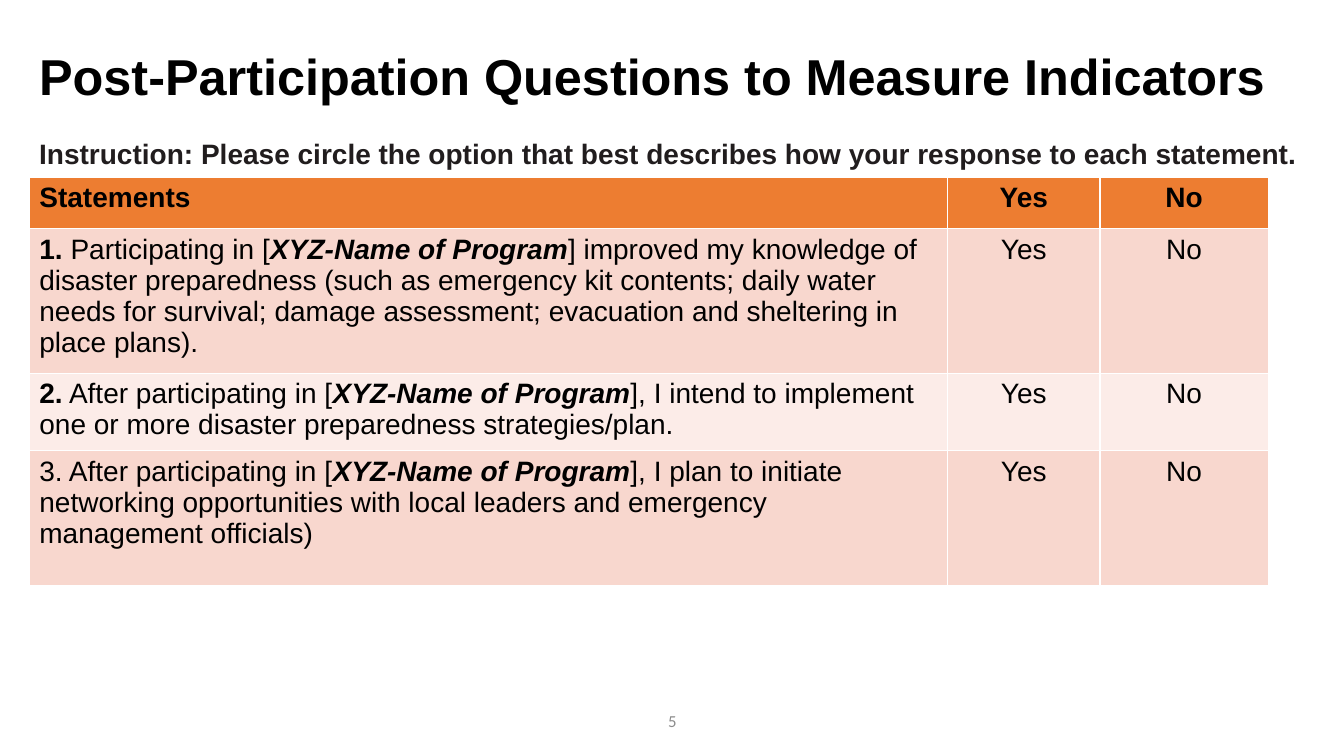
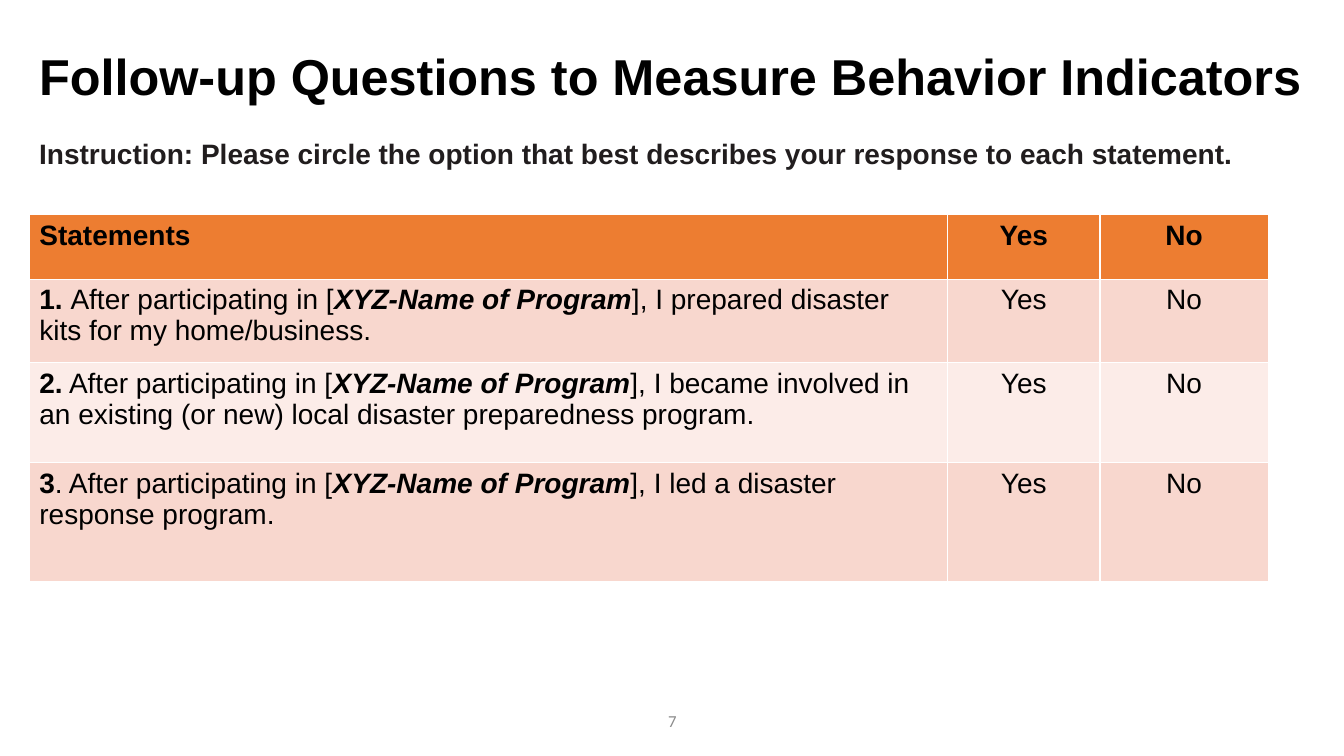
"""Build two survey slides that share a title style, a table style and a footer."""
from dataclasses import dataclass

from lxml import etree
from pptx import Presentation
from pptx.dml.color import RGBColor
from pptx.enum.text import MSO_ANCHOR, PP_ALIGN
from pptx.oxml.ns import qn
from pptx.util import Inches, Pt

BLACK, INK, GREY, WHITE = "000000", "211D1E", "8C8C8C", "FFFFFF"
HEADER_FILL = "ED7D31"
BAND_FILLS = ("F8D7CE", "FCECE8")
PROGRAM = "XYZ-Name of Program"
ANSWERS = ("Yes", "No")
LEFT, TEXT_WIDTH = 0.29, 12.8
COLUMN_WIDTHS = (9.11, 1.51, 1.67)


@dataclass(frozen=True)
class TextStyle:
    size: int
    color: str
    bold: bool = False
    font: str = "Arial"
    align: PP_ALIGN = PP_ALIGN.LEFT
    spacing: float = 1.0


TITLE = TextStyle(36, BLACK, bold=True, spacing=0.9)
INSTRUCTION = TextStyle(20, INK, bold=True, spacing=0.9)
FOOTER = TextStyle(12, GREY, font="Calibri", align=PP_ALIGN.CENTER)
HEADING = TextStyle(20, BLACK, bold=True)
HEADING_CENTERED = TextStyle(20, BLACK, bold=True, align=PP_ALIGN.CENTER)
STATEMENT = TextStyle(20, BLACK)
ANSWER = TextStyle(20, BLACK, align=PP_ALIGN.CENTER)


@dataclass(frozen=True)
class Statement:
    number: str
    opening: str
    ending: str
    height: float


@dataclass(frozen=True)
class Survey:
    title: str
    instruction: str
    number: int
    table_top: float
    header_height: float
    statements: tuple[Statement, ...]


SURVEYS = (
    Survey(
        "Post-Participation Questions to Measure Indicators",
        "Instruction: Please circle the option that best describes how your response to each statement.",
        5, 1.76, 0.51,
        (
            Statement("1. ", "Participating in [",
                      "] improved my knowledge of disaster preparedness (such as emergency kit contents; "
                      "daily water needs for survival; damage assessment; evacuation and sheltering in "
                      "place plans).", 1.33),
            Statement("2.", " After participating in [",
                      "], I intend to implement one or more disaster preparedness strategies/plan.", 0.72),
            Statement("", "3. After participating in [",
                      "], I plan to initiate networking opportunities with local leaders and emergency "
                      "management officials)", 1.34),
        ),
    ),
    Survey(
        "Follow-up Questions to Measure Behavior Indicators",
        "Instruction: Please circle the option that best describes your response to each statement.",
        7, 2.13, 0.64,
        (
            Statement("1. ", "After participating in [",
                      "], I prepared disaster kits for my home/business.", 0.83),
            Statement("2.", " After participating in [",
                      "], I became involved in an existing (or new) local disaster preparedness program.", 0.99),
            Statement("3", ". After participating in [",
                      "], I led a disaster response program.", 1.18),
        ),
    ),
)


def rgb(color: str) -> RGBColor:
    return RGBColor.from_string(color)


def style_paragraph(para, style: TextStyle) -> None:
    para.alignment = style.align
    para.line_spacing = style.spacing
    para.font.name = style.font
    para.font.size = Pt(style.size)
    para.font.bold = style.bold
    para.font.color.rgb = rgb(style.color)


def add_text(page, left: float, top: float, width: float, height: float,
             words: str, style: TextStyle, anchor=MSO_ANCHOR.MIDDLE) -> None:
    box = page.shapes.add_textbox(Inches(left), Inches(top), Inches(width), Inches(height))
    frame = box.text_frame
    frame.word_wrap = True
    frame.vertical_anchor = anchor
    para = frame.paragraphs[0]
    para.text = words
    style_paragraph(para, style)


def style_cell(cell, fill: str) -> None:
    properties = cell._tc.get_or_add_tcPr()
    for side in ("a:lnL", "a:lnR", "a:lnT", "a:lnB"):
        line = etree.SubElement(properties, qn(side), w=str(Pt(1)))
        solid = etree.SubElement(line, qn("a:solidFill"))
        etree.SubElement(solid, qn("a:srgbClr"), val=WHITE)
    cell.fill.solid()
    cell.fill.fore_color.rgb = rgb(fill)


def fill_cell(cell, words: str, style: TextStyle, fill: str) -> None:
    style_cell(cell, fill)
    para = cell.text_frame.paragraphs[0]
    para.text = words
    style_paragraph(para, style)


def fill_statement(cell, statement: Statement, fill: str) -> None:
    style_cell(cell, fill)
    para = cell.text_frame.paragraphs[0]
    style_paragraph(para, STATEMENT)
    parts = ((statement.number, True, False), (statement.opening, False, False),
             (PROGRAM, True, True), (statement.ending, False, False))
    for words, bold, italic in parts:
        if words:
            span = para.add_run()
            span.text = words
            span.font.bold = bold
            span.font.italic = italic


def add_survey_table(page, survey: Survey) -> None:
    heights = (survey.header_height, *(item.height for item in survey.statements))
    table = page.shapes.add_table(
        len(heights), len(COLUMN_WIDTHS), Inches(LEFT), Inches(survey.table_top),
        Inches(sum(COLUMN_WIDTHS)), Inches(sum(heights))).table
    for column, width in zip(table.columns, COLUMN_WIDTHS):
        column.width = Inches(width)
    for row, height in zip(table.rows, heights):
        row.height = Inches(height)

    fill_cell(table.cell(0, 0), "Statements", HEADING, HEADER_FILL)
    for column, answer in enumerate(ANSWERS, start=1):
        fill_cell(table.cell(0, column), answer, HEADING_CENTERED, HEADER_FILL)
    for row, statement in enumerate(survey.statements, start=1):
        fill = BAND_FILLS[(row - 1) % len(BAND_FILLS)]
        fill_statement(table.cell(row, 0), statement, fill)
        for column, answer in enumerate(ANSWERS, start=1):
            fill_cell(table.cell(row, column), answer, ANSWER, fill)


def add_survey_page(deck, survey: Survey) -> None:
    page = deck.slides.add_slide(deck.slide_layouts[6])
    add_text(page, LEFT, 0.42, TEXT_WIDTH, 0.74, survey.title, TITLE)
    add_text(page, LEFT, 1.34, TEXT_WIDTH, 0.66, survey.instruction, INSTRUCTION, MSO_ANCHOR.TOP)
    add_text(page, 4.42, 6.95, 4.5, 0.4, str(survey.number), FOOTER)
    add_survey_table(page, survey)


def main() -> None:
    deck = Presentation()
    deck.slide_width, deck.slide_height = Inches(13.33), Inches(7.5)
    for survey in SURVEYS:
        add_survey_page(deck, survey)
    deck.save("out.pptx")


if __name__ == "__main__":
    main()
